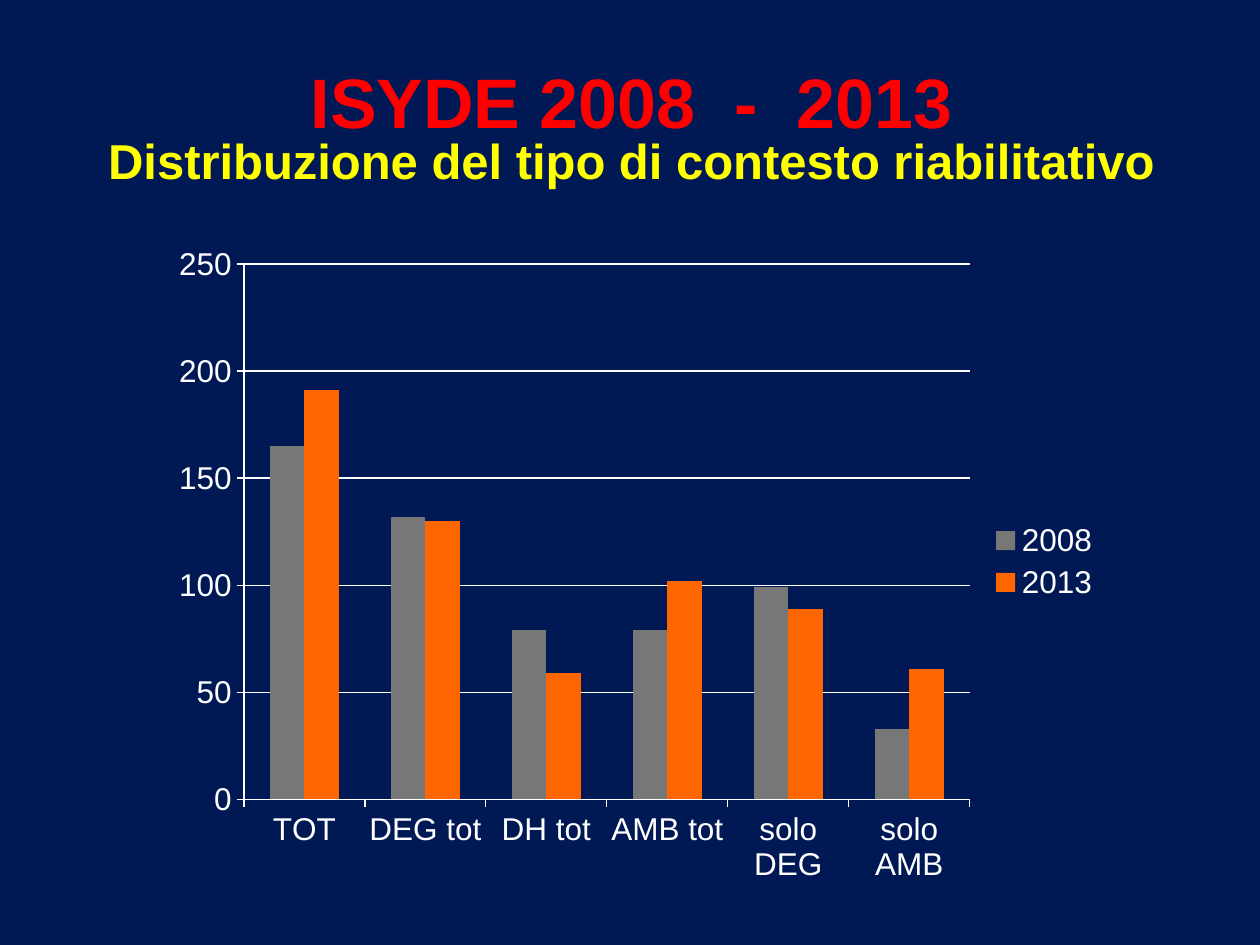
from lxml import etree
from pptx import Presentation
from pptx.chart.data import CategoryChartData
from pptx.dml.color import RGBColor
from pptx.enum.chart import XL_CHART_TYPE as ChartType
from pptx.enum.chart import XL_LEGEND_POSITION as LegendPosition
from pptx.enum.chart import XL_TICK_MARK as TickMark
from pptx.enum.text import MSO_ANCHOR as Anchor
from pptx.enum.text import PP_ALIGN as Align
from pptx.oxml.ns import qn
from pptx.util import Emu, Pt

PX = 914400 // 126
FONT = "Arial"
NAVY = RGBColor(0x00, 0x19, 0x55)
WHITE = RGBColor(0xFF, 0xFF, 0xFF)
RED = RGBColor(0xFF, 0x00, 0x00)
YELLOW = RGBColor(0xFF, 0xFF, 0x00)
GREY = RGBColor(0x77, 0x77, 0x77)
ORANGE = RGBColor(0xFF, 0x66, 0x00)

CONTEXTS = ["TOT", "DEG tot", "DH tot", "AMB tot", "solo DEG", "solo AMB"]
YEARS = [
    ("2008", [165, 132, 79, 79, 99, 33], GREY),
    ("2013", [191, 130, 59, 102, 89, 61], ORANGE),
]
CHART_AREA = (158, 231, 955, 661)
PLOT_AREA = {"x": 0.09, "y": 0.05, "w": 0.76, "h": 0.81}


def px(*lengths):
    """Turn pixel lengths into EMU."""
    return [Emu(length * PX) for length in lengths]


def style_font(font, size, color, bold=False):
    """Set typeface, size, colour and weight."""
    font.name, font.size, font.bold = FONT, Pt(size), bold
    font.color.rgb = color


def add_span(para, text, size, color):
    """Add one bold run to a paragraph."""
    span = para.add_run()
    span.text = text
    style_font(span.font, size, color, bold=True)


def add_title(page):
    """Add the two-line heading."""
    frame = page.shapes.add_textbox(*px(43, 26, 1177, 169)).text_frame
    frame.word_wrap = True
    frame.vertical_anchor = Anchor.BOTTOM
    para = frame.paragraphs[0]
    para.alignment = Align.CENTER
    para.line_spacing = 0.8
    add_span(para, "ISYDE 2008  -  2013", 40, RED)
    para.add_line_break()
    add_span(para, "Distribuzione del tipo di contesto riabilitativo", 28, YELLOW)


def place_plot(chart):
    """Fix the inner plot area as fractions of the chart."""
    plot_area = chart.plots[0]._element.getparent()
    layout = plot_area.find(qn("c:layout"))
    if layout is None:
        layout = etree.Element(qn("c:layout"))
        plot_area.insert(0, layout)
    manual = etree.SubElement(layout, qn("c:manualLayout"))
    settings = {"layoutTarget": "inner", "xMode": "edge", "yMode": "edge", **PLOT_AREA}
    for name, value in settings.items():
        etree.SubElement(manual, qn(f"c:{name}")).set("val", str(value))


def style_axis(axis):
    """Give an axis a thin white line with outer ticks."""
    axis.major_tick_mark = TickMark.OUTSIDE
    axis.minor_tick_mark = TickMark.NONE
    axis.format.line.color.rgb = WHITE
    axis.format.line.width = Pt(0.75)


def add_context_chart(page):
    """Add the clustered columns comparing both years."""
    data = CategoryChartData()
    data.categories = CONTEXTS
    for year, counts, _ in YEARS:
        data.add_series(year, counts)
    frame = page.shapes.add_chart(ChartType.COLUMN_CLUSTERED, *px(*CHART_AREA), data)
    chart = frame.chart
    chart.has_title = False
    style_font(chart.font, 18, WHITE)
    chart.has_legend = True
    chart.legend.position = LegendPosition.RIGHT
    chart.legend.include_in_layout = False

    plot = chart.plots[0]
    plot.gap_width, plot.overlap = 150, 0
    plot.vary_by_categories = False
    for series, (_, _, color) in zip(plot.series, YEARS):
        series.format.fill.solid()
        series.format.fill.fore_color.rgb = color

    for axis in (chart.category_axis, chart.value_axis):
        style_axis(axis)
    values = chart.value_axis
    values.minimum_scale, values.maximum_scale, values.major_unit = 0, 250, 50
    values.has_major_gridlines = True
    gridline = values.major_gridlines.format.line
    gridline.color.rgb = WHITE
    gridline.width = Pt(0.75)
    place_plot(chart)


def main():
    """Build and save the slide."""
    deck = Presentation()
    deck.slide_width, deck.slide_height = px(1260, 945)
    page = deck.slides.add_slide(deck.slide_layouts[6])
    page.background.fill.solid()
    page.background.fill.fore_color.rgb = NAVY
    add_context_chart(page)
    add_title(page)
    deck.save("out.pptx")


if __name__ == "__main__":
    main()
